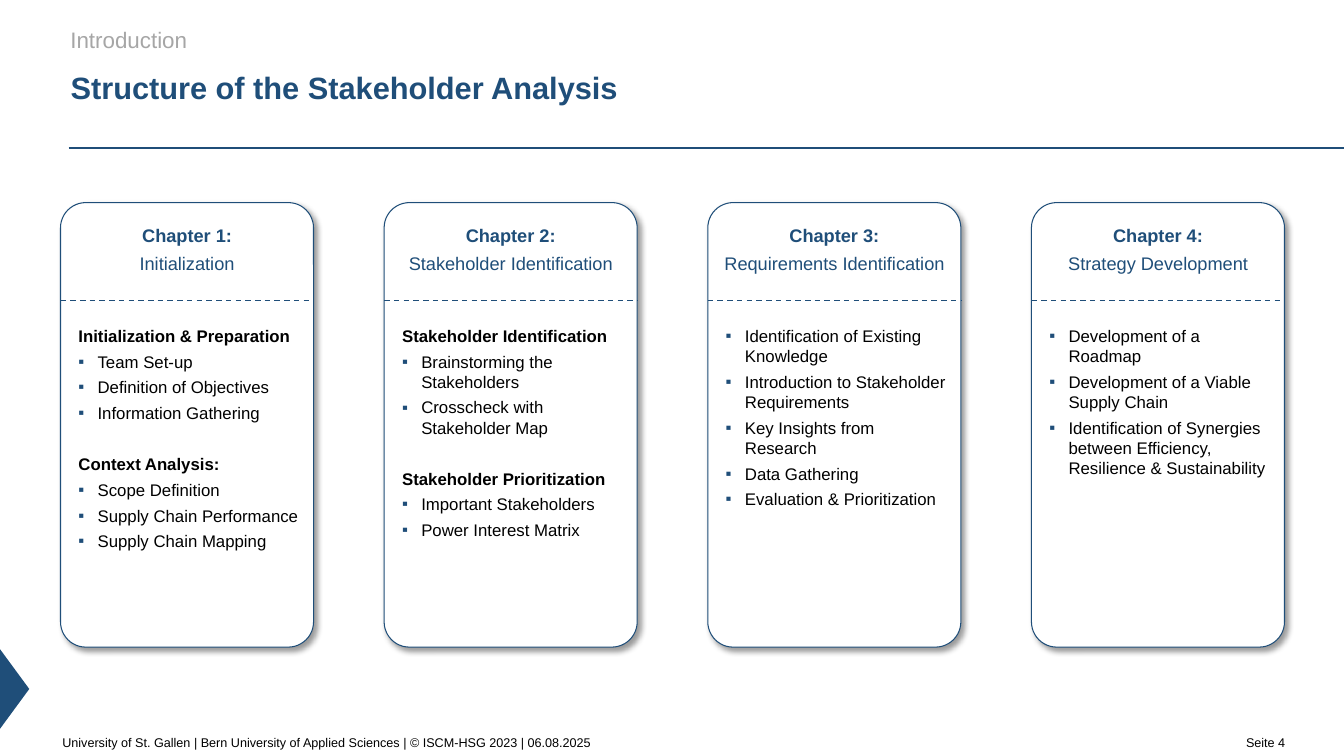
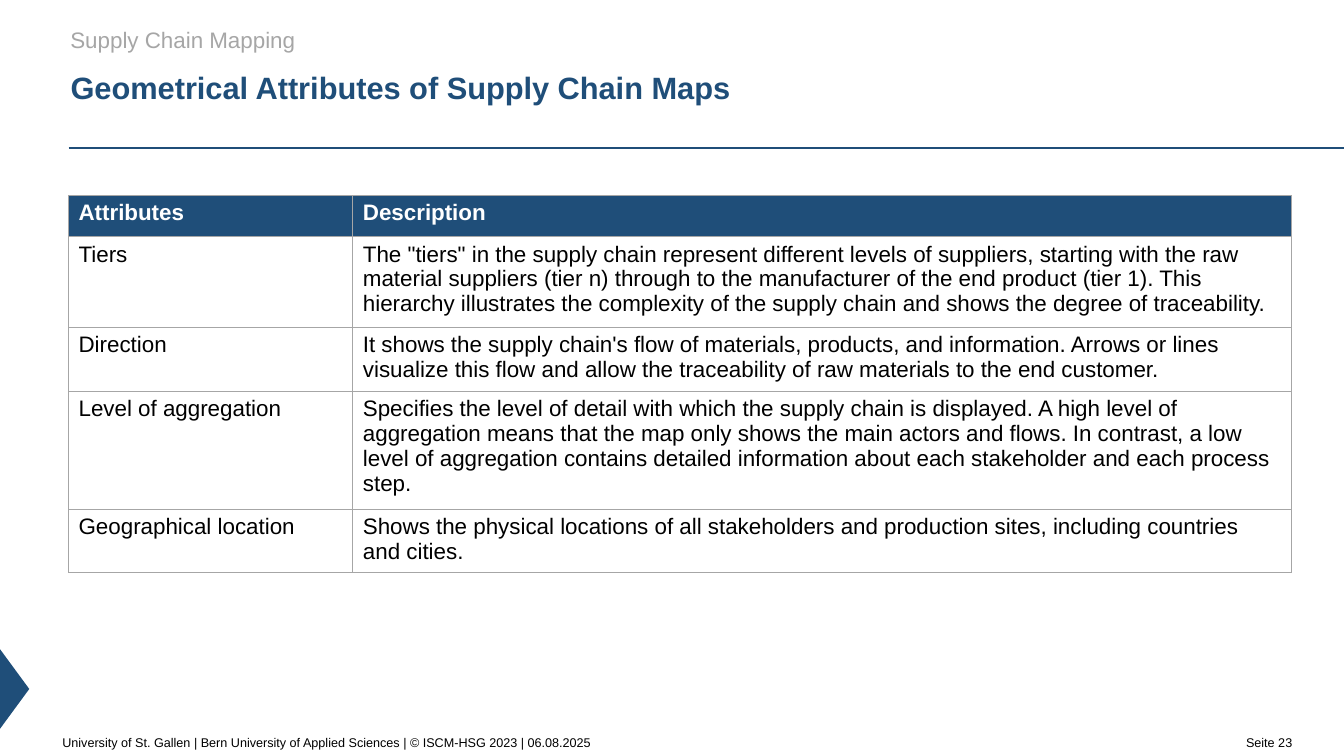
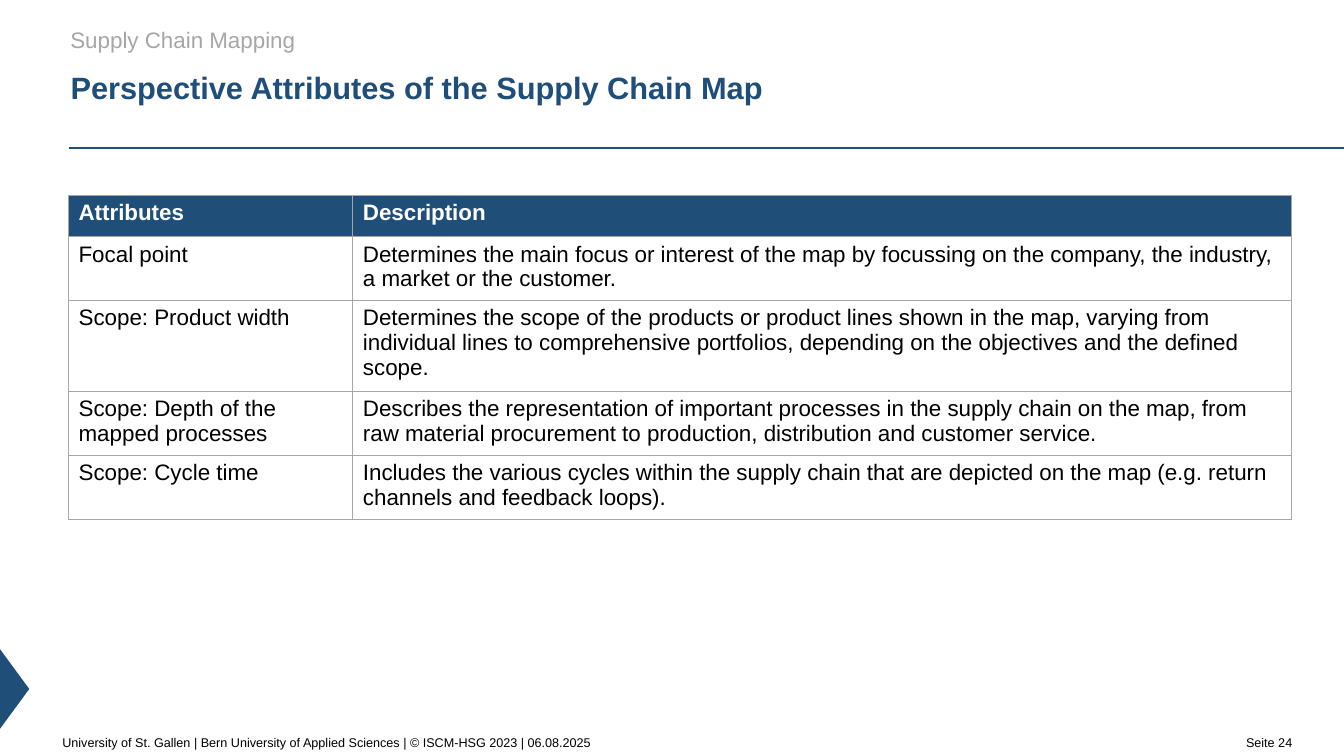
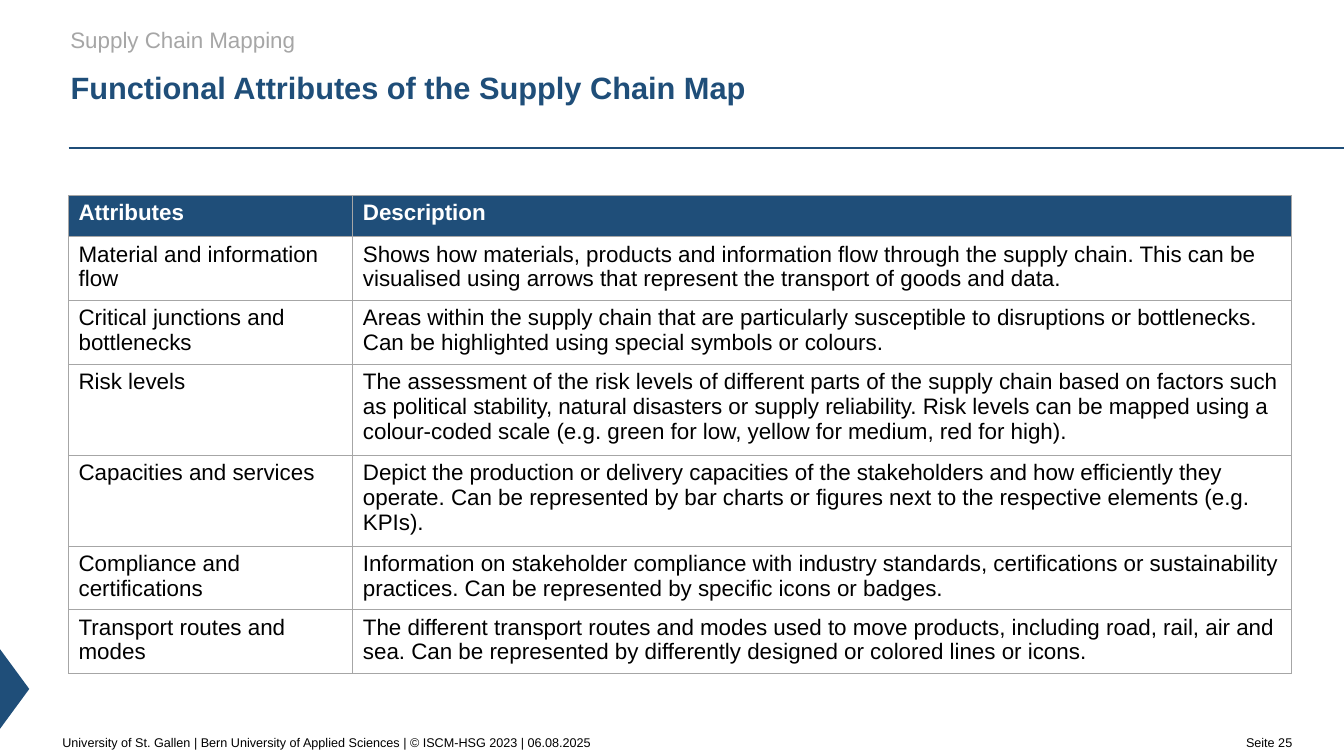
from dataclasses import dataclass

import lxml.etree
import pptx
import pptx.dml.color
import pptx.enum.dml
import pptx.enum.shapes
import pptx.enum.text
import pptx.oxml.ns
import pptx.presentation
import pptx.shapes.autoshape
import pptx.slide
import pptx.table
import pptx.text.text
import pptx.util

Inches = pptx.util.Inches
Pt = pptx.util.Pt
RGBColor = pptx.dml.color.RGBColor
ALIGN = pptx.enum.text.PP_ALIGN
ANCHOR = pptx.enum.text.MSO_ANCHOR
SHAPE = pptx.enum.shapes.MSO_SHAPE
qn = pptx.oxml.ns.qn

NAVY = RGBColor(0x1F, 0x4E, 0x79)
GREY = RGBColor(0xA6, 0xA6, 0xA6)
BLACK = RGBColor(0, 0, 0)
WHITE = RGBColor(0xFF, 0xFF, 0xFF)
FONT = "Arial"
FOOTER = "University of St. Gallen | Bern University of Applied Sciences | © ISCM-HSG 2023 | 06.08.2025"

SLIDE_WIDTH = 13.33
CARD_LEFT, CARD_TOP, CARD_PITCH = 0.6, 2.01, 3.21
CARD_WIDTH, CARD_HEIGHT = 2.51, 4.41
COLUMN_WIDTHS = (2.82, 9.31)
ROW_HEIGHT = 0.41


@dataclass(frozen=True)
class Section:
    bullets: tuple[str, ...]
    heading: str = ""


@dataclass(frozen=True)
class Chapter:
    name: str
    sections: tuple[Section, ...]


@dataclass(frozen=True)
class AttributePage:
    number: int
    title: str
    rows: tuple[tuple[str, str], ...]


CHAPTERS = (
    Chapter("Initialization", (
        Section(("Team Set-up", "Definition of Objectives", "Information Gathering"),
                "Initialization & Preparation"),
        Section(("Scope Definition", "Supply Chain Performance", "Supply Chain Mapping"),
                "Context Analysis:"),
    )),
    Chapter("Stakeholder Identification", (
        Section(("Brainstorming the Stakeholders", "Crosscheck with Stakeholder Map"),
                "Stakeholder Identification"),
        Section(("Important Stakeholders", "Power Interest Matrix"),
                "Stakeholder Prioritization"),
    )),
    Chapter("Requirements Identification", (
        Section(("Identification of Existing Knowledge",
                 "Introduction to Stakeholder Requirements",
                 "Key Insights from Research",
                 "Data Gathering",
                 "Evaluation & Prioritization")),
    )),
    Chapter("Strategy Development", (
        Section(("Development of a Roadmap",
                 "Development of a Viable Supply Chain",
                 "Identification of Synergies between Efficiency, Resilience & Sustainability")),
    )),
)

ATTRIBUTE_PAGES = (
    AttributePage(23, "Geometrical Attributes of Supply Chain Maps", (
        ("Tiers",
         'The "tiers" in the supply chain represent different levels of suppliers, starting with '
         "the raw material suppliers (tier n) through to the manufacturer of the end product "
         "(tier 1). This hierarchy illustrates the complexity of the supply chain and shows the "
         "degree of traceability."),
        ("Direction",
         "It shows the supply chain's flow of materials, products, and information. Arrows or "
         "lines visualize this flow and allow the traceability of raw materials to the end "
         "customer."),
        ("Level of aggregation",
         "Specifies the level of detail with which the supply chain is displayed. A high level of "
         "aggregation means that the map only shows the main actors and flows. In contrast, a low "
         "level of aggregation contains detailed information about each stakeholder and each "
         "process step."),
        ("Geographical location",
         "Shows the physical locations of all stakeholders and production sites, including "
         "countries and cities."),
    )),
    AttributePage(24, "Perspective Attributes of the Supply Chain Map", (
        ("Focal point",
         "Determines the main focus or interest of the map by focussing on the company, the "
         "industry, a market or the customer."),
        ("Scope: Product width",
         "Determines the scope of the products or product lines shown in the map, varying from "
         "individual lines to comprehensive portfolios, depending on the objectives and the "
         "defined scope."),
        ("Scope: Depth of the mapped processes",
         "Describes the representation of important processes in the supply chain on the map, "
         "from raw material procurement to production, distribution and customer service."),
        ("Scope: Cycle time",
         "Includes the various cycles within the supply chain that are depicted on the map (e.g. "
         "return channels and feedback loops)."),
    )),
    AttributePage(25, "Functional Attributes of the Supply Chain Map", (
        ("Material and information flow",
         "Shows how materials, products and information flow through the supply chain. This can "
         "be visualised using arrows that represent the transport of goods and data."),
        ("Critical junctions and bottlenecks",
         "Areas within the supply chain that are particularly susceptible to disruptions or "
         "bottlenecks. Can be highlighted using special symbols or colours."),
        ("Risk levels",
         "The assessment of the risk levels of different parts of the supply chain based on "
         "factors such as political stability, natural disasters or supply reliability. Risk "
         "levels can be mapped using a colour-coded scale (e.g. green for low, yellow for medium, "
         "red for high)."),
        ("Capacities and services",
         "Depict the production or delivery capacities of the stakeholders and how efficiently "
         "they operate. Can be represented by bar charts or figures next to the respective "
         "elements (e.g. KPIs)."),
        ("Compliance and certifications",
         "Information on stakeholder compliance with industry standards, certifications or "
         "sustainability practices. Can be represented by specific icons or badges."),
        ("Transport routes and modes",
         "The different transport routes and modes used to move products, including road, rail, "
         "air and sea. Can be represented by differently designed or colored lines or icons."),
    )),
)


def style_paragraph(para: pptx.text.text._Paragraph, size: float, color: RGBColor,
                    bold: bool = False, align: ALIGN = ALIGN.LEFT) -> None:
    para.alignment = align
    para.font.name = FONT
    para.font.size = Pt(size)
    para.font.bold = bold
    para.font.color.rgb = color


def add_text_frame(page: pptx.slide.Slide, left: float, top: float, width: float, height: float,
                   anchor: ANCHOR = ANCHOR.TOP) -> pptx.text.text.TextFrame:
    box = page.shapes.add_textbox(Inches(left), Inches(top), Inches(width), Inches(height))
    frame = box.text_frame
    frame.word_wrap = True
    frame.vertical_anchor = anchor
    return frame


def add_label(page: pptx.slide.Slide, text: str, left: float, top: float, width: float,
              height: float, size: float, color: RGBColor, anchor: ANCHOR = ANCHOR.TOP) -> None:
    para = add_text_frame(page, left, top, width, height, anchor).paragraphs[0]
    para.text = text
    style_paragraph(para, size, color)


def add_rule(page: pptx.slide.Slide, left: float, right: float, y: float, weight: float,
             dashed: bool = False) -> None:
    rule = page.shapes.add_connector(pptx.enum.shapes.MSO_CONNECTOR.STRAIGHT,
                                     Inches(left), Inches(y), Inches(right), Inches(y))
    rule.line.color.rgb = NAVY
    rule.line.width = Pt(weight)
    if dashed:
        rule.line.dash_style = pptx.enum.dml.MSO_LINE.DASH
    lxml.etree.SubElement(rule.element.spPr, qn("a:effectLst"))


def add_shape(page: pptx.slide.Slide, kind: SHAPE, left: float, top: float, width: float,
              height: float, fill: RGBColor) -> pptx.shapes.autoshape.Shape:
    shape = page.shapes.add_shape(kind, Inches(left), Inches(top), Inches(width), Inches(height))
    shape.fill.solid()
    shape.fill.fore_color.rgb = fill
    shape.line.fill.background()
    shape.shadow.inherit = False
    return shape


def add_page(deck: pptx.presentation.Presentation, number: int, topic: str,
             title: str) -> pptx.slide.Slide:
    """Add a slide with the footer, rule, side arrow, topic line and title."""
    page = deck.slides.add_slide(deck.slide_layouts.get_by_name("Title Only"))
    add_label(page, FOOTER, 0.52, 7.23, 10.87, 0.27, 9, BLACK, ANCHOR.MIDDLE)
    add_label(page, f"Seite {number}", 12.26, 7.23, 0.79, 0.27, 9, BLACK, ANCHOR.MIDDLE)
    add_rule(page, 0.68, SLIDE_WIDTH, 1.47, 1.5)
    arrow = add_shape(page, SHAPE.ISOSCELES_TRIANGLE, -0.25, 6.69, 0.79, 0.29, NAVY)
    arrow.rotation = 90
    add_label(page, topic, 0.6, 0.21, 12.2, 0.39, 16, GREY)

    heading = page.shapes.title
    heading.left, heading.top = Inches(0.6), Inches(0.63)
    heading.width, heading.height = Inches(12.2), Inches(0.84)
    frame = heading.text_frame
    frame.text = title
    frame.auto_size = pptx.enum.text.MSO_AUTO_SIZE.NONE
    frame.vertical_anchor = ANCHOR.TOP
    style_paragraph(frame.paragraphs[0], 22, NAVY, bold=True)
    return page


def cast_shadow(shape: pptx.shapes.autoshape.Shape) -> None:
    """Give the shape a soft black shadow towards the lower right."""
    effects = shape.element.spPr.find(qn("a:effectLst"))
    shadow = lxml.etree.SubElement(effects, qn("a:outerShdw"), blurRad=str(Pt(4)),
                                   dist=str(Pt(3)), dir=str(45 * 60000), algn="tl",
                                   rotWithShape="0")
    color = lxml.etree.SubElement(shadow, qn("a:srgbClr"), val=str(BLACK))
    lxml.etree.SubElement(color, qn("a:alpha"), val="40000")


def add_bullet(para: pptx.text.text._Paragraph) -> None:
    properties = para._p.get_or_add_pPr()
    properties.set("marL", str(Inches(0.19)))
    properties.set("indent", str(-Inches(0.19)))
    color = lxml.etree.SubElement(properties, qn("a:buClr"))
    lxml.etree.SubElement(color, qn("a:srgbClr"), val=str(NAVY))
    lxml.etree.SubElement(properties, qn("a:buFont"), typeface=FONT)
    lxml.etree.SubElement(properties, qn("a:buChar"), char="▪")


def next_paragraph(frame: pptx.text.text.TextFrame, text: str) -> pptx.text.text._Paragraph:
    """Fill the empty first paragraph, or append a new one."""
    para = frame.add_paragraph() if frame.text else frame.paragraphs[0]
    para.text = text
    para.space_after = Pt(4)
    return para


def add_chapter_card(page: pptx.slide.Slide, index: int, chapter: Chapter) -> None:
    left = CARD_LEFT + index * CARD_PITCH
    card = add_shape(page, SHAPE.ROUNDED_RECTANGLE, left, CARD_TOP, CARD_WIDTH, CARD_HEIGHT, WHITE)
    card.adjustments[0] = 0.1
    card.line.color.rgb = NAVY
    card.line.width = Pt(0.75)
    cast_shadow(card)

    header = add_text_frame(page, left, 2.18, CARD_WIDTH, 0.63)
    for text, bold in ((f"Chapter {index + 1}:", True), (chapter.name, False)):
        style_paragraph(next_paragraph(header, text), 13, NAVY, bold, ALIGN.CENTER)

    body = add_text_frame(page, left + 0.08, 3.18, 2.43, 3.05)
    for position, section in enumerate(chapter.sections):
        if section.heading:
            para = next_paragraph(body, section.heading)
            if position:
                para.space_before = Pt(18)
            style_paragraph(para, 12, BLACK, bold=True)
        for bullet in section.bullets:
            para = next_paragraph(body, bullet)
            add_bullet(para)
            style_paragraph(para, 12, BLACK)
    add_rule(page, left, left + CARD_WIDTH, 2.98, 1, dashed=True)


def add_borders(cell: pptx.table._Cell) -> None:
    properties = cell._tc.get_or_add_tcPr()
    for side in ("lnL", "lnR", "lnT", "lnB"):
        border = lxml.etree.SubElement(properties, qn(f"a:{side}"), w=str(Pt(0.75)))
        fill = lxml.etree.SubElement(border, qn("a:solidFill"))
        lxml.etree.SubElement(fill, qn("a:srgbClr"), val=str(GREY))


def add_attribute_table(page: pptx.slide.Slide, rows: tuple[tuple[str, str], ...]) -> None:
    lines = (("Attributes", "Description"), *rows)
    table = page.shapes.add_table(len(lines), len(COLUMN_WIDTHS), Inches(0.68), Inches(1.94),
                                  Inches(sum(COLUMN_WIDTHS)),
                                  Inches(ROW_HEIGHT * len(lines))).table
    table.horz_banding = False
    for column, width in zip(table.columns, COLUMN_WIDTHS):
        column.width = Inches(width)
    for row_index, line in enumerate(lines):
        is_header = row_index == 0
        for column_index, text in enumerate(line):
            cell = table.cell(row_index, column_index)
            cell.text = text
            add_borders(cell)
            if is_header:
                cell.fill.solid()
                cell.fill.fore_color.rgb = NAVY
            else:
                cell.fill.background()
            style_paragraph(cell.text_frame.paragraphs[0], 16,
                            WHITE if is_header else BLACK, bold=is_header)


def main() -> None:
    deck = pptx.Presentation()
    deck.slide_width, deck.slide_height = Inches(SLIDE_WIDTH), Inches(7.5)

    page = add_page(deck, 4, "Introduction", "Structure of the Stakeholder Analysis")
    for index, chapter in enumerate(CHAPTERS):
        add_chapter_card(page, index, chapter)

    for content in ATTRIBUTE_PAGES:
        page = add_page(deck, content.number, "Supply Chain Mapping", content.title)
        add_attribute_table(page, content.rows)

    deck.save("out.pptx")


if __name__ == "__main__":
    main()
